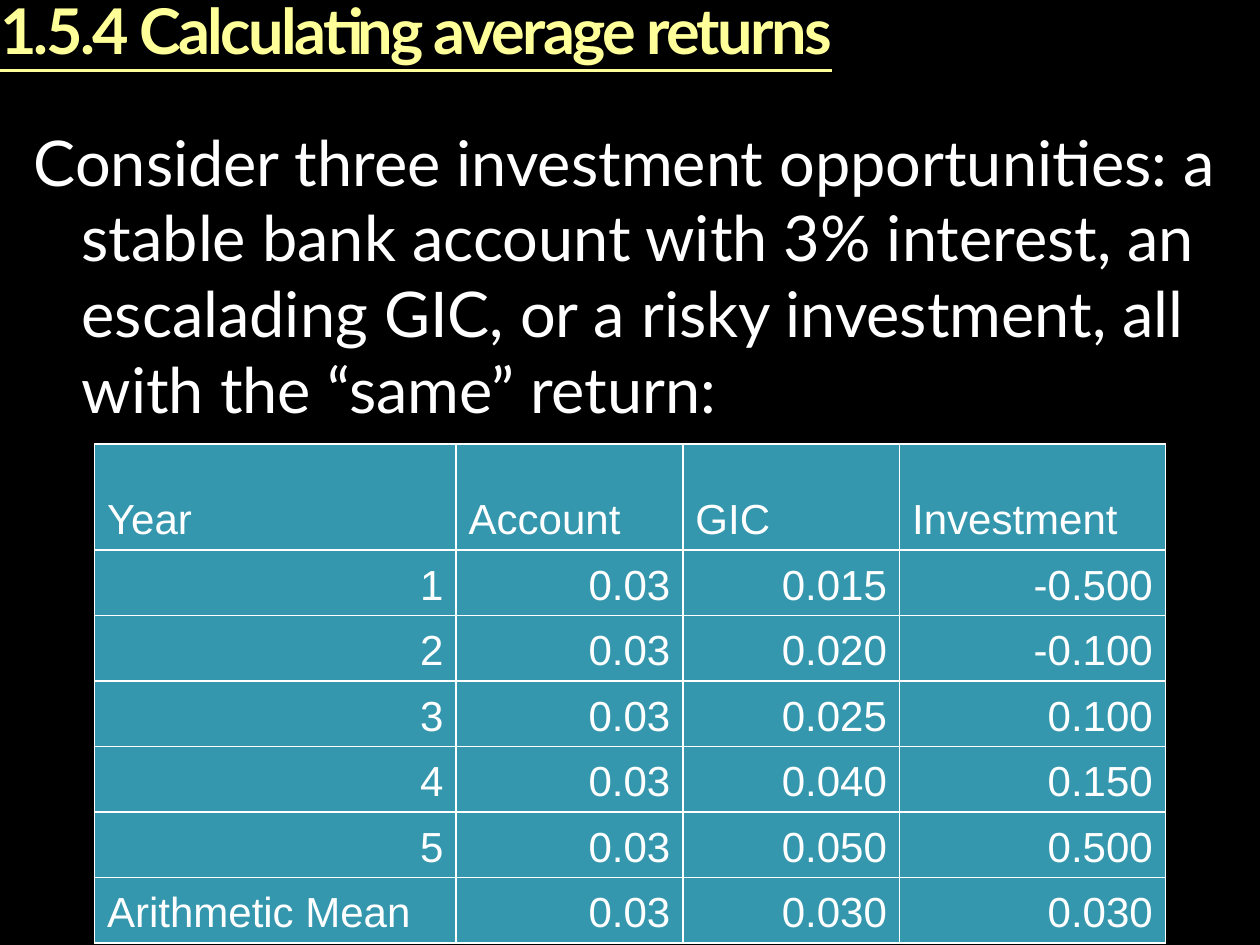
from lxml.etree import SubElement
from pptx import Presentation
from pptx.dml.color import RGBColor
from pptx.enum.text import MSO_ANCHOR, MSO_AUTO_SIZE, PP_ALIGN
from pptx.oxml.ns import qn
from pptx.util import Inches, Pt

BLACK = RGBColor(0x00, 0x00, 0x00)
WHITE = RGBColor(0xFF, 0xFF, 0xFF)
YELLOW = RGBColor(0xFF, 0xFF, 0x99)
TEAL = RGBColor(0x34, 0x97, 0xAE)

TITLE = "1.5.4 Calculating average returns"
INTRODUCTION = (
    "Consider three investment opportunities: a stable bank account with 3% interest, "
    "an escalading GIC, or a risky investment, all with the “same” return:"
)
RETURNS = [
    ("Year", "Account", "GIC", "Investment"),
    ("1", "0.03", "0.015", "-0.500"),
    ("2", "0.03", "0.020", "-0.100"),
    ("3", "0.03", "0.025", "0.100"),
    ("4", "0.03", "0.040", "0.150"),
    ("5", "0.03", "0.050", "0.500"),
    ("Arithmetic Mean", "0.03", "0.030", "0.030"),
]


def write_text(text_frame, text, size=36, font="Lato", color=WHITE, bold=False,
               underline=False, align=PP_ALIGN.LEFT, hanging=0, line_spacing=None, tracking=0):
    paragraph = text_frame.paragraphs[0]
    paragraph.alignment = align
    paragraph.space_before = Pt(0)
    paragraph.line_spacing = line_spacing
    if hanging:
        properties = paragraph._p.get_or_add_pPr()
        properties.set("marL", str(Inches(hanging)))
        properties.set("indent", str(-Inches(hanging)))
    run = paragraph.add_run()
    run.text = text
    run.font.size = Pt(size)
    run.font.name = font
    run.font.bold = bold
    run.font.underline = underline
    run.font.color.rgb = color
    if tracking:
        run._r.get_or_add_rPr().set("spc", str(int(tracking * 100)))


class SlideBuilder:
    hanging = 0.38
    border_width = Pt(1)

    def __init__(self, presentation):
        self.width = presentation.slide_width
        self.height = presentation.slide_height
        self.slide = presentation.slides.add_slide(presentation.slide_layouts[5])
        self.slide.background.fill.solid()
        self.slide.background.fill.fore_color.rgb = BLACK

    def area(self, left, top, width, height):
        return (int(left * self.width), int(top * self.height),
                int(width * self.width), int(height * self.height))

    def title(self, text, *shares):
        shape = self.slide.shapes.title
        shape.left, shape.top, shape.width, shape.height = self.area(*shares)
        frame = shape.text_frame
        frame.margin_left = frame.margin_top = frame.margin_right = frame.margin_bottom = 0
        frame.vertical_anchor = MSO_ANCHOR.TOP
        frame.auto_size = MSO_AUTO_SIZE.NONE
        write_text(frame, text, color=YELLOW, bold=True, underline=True,
                   line_spacing=0.9, tracking=-1.5)

    def text(self, text, *shares):
        frame = self.slide.shapes.add_textbox(*self.area(*shares)).text_frame
        frame.word_wrap = True
        write_text(frame, text, hanging=self.hanging)

    def table(self, rows, column_widths, row_heights, *shares):
        frame = self.slide.shapes.add_table(len(rows), len(column_widths), *self.area(*shares))
        table = frame.table
        table.first_row = table.horz_banding = False
        for column, width in zip(table.columns, column_widths):
            column.width = Inches(width)
        for row, height, values in zip(table.rows, row_heights, rows):
            row.height = Inches(height)
            for cell, value in zip(row.cells, values):
                self.cell(cell, value)

    def cell(self, cell, value):
        self.borders(cell)
        cell.fill.solid()
        cell.fill.fore_color.rgb = TEAL
        cell.vertical_anchor = MSO_ANCHOR.BOTTOM
        align = PP_ALIGN.LEFT if value[0].isalpha() else PP_ALIGN.RIGHT
        write_text(cell.text_frame, value, size=24, font="Arial", align=align,
                   hanging=self.hanging)

    def borders(self, cell):
        properties = cell._tc.get_or_add_tcPr()
        for side in ("lnL", "lnR", "lnT", "lnB"):
            line = SubElement(properties, qn(f"a:{side}"), w=str(self.border_width))
            fill = SubElement(line, qn("a:solidFill"))
            SubElement(fill, qn("a:srgbClr"), val=str(WHITE))


def main():
    presentation = Presentation()
    presentation.slide_width = Inches(10)
    presentation.slide_height = Inches(7.5)
    builder = SlideBuilder(presentation)
    builder.title(TITLE, 0, 0, 1, 1 / 6)
    builder.table(RETURNS, (2.87, 1.8, 1.72, 2.11), [0.84] + [0.52] * 6,
                  0.075, 0.47, 0.85, 0.53)
    builder.text(INTRODUCTION, 0.017, 0.124, 0.983, 0.28)
    presentation.save("out.pptx")


if __name__ == "__main__":
    main()
